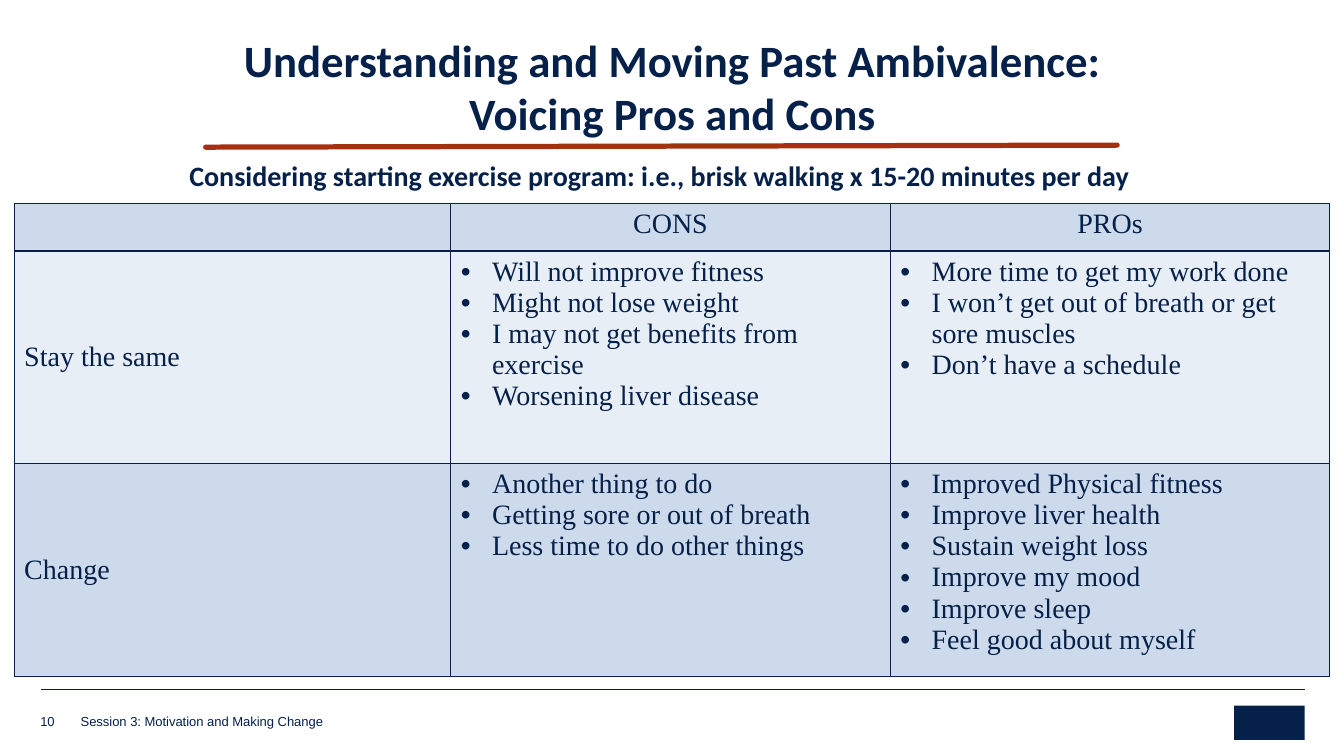
"""Build the pros and cons slide on moving past ambivalence."""
from lxml import etree
from pptx import Presentation
from pptx.dml.color import RGBColor as RGB
from pptx.enum.shapes import MSO_CONNECTOR as Link, MSO_SHAPE as Shape
from pptx.enum.text import MSO_ANCHOR as Anchor, MSO_AUTO_SIZE as Fit, PP_ALIGN as Align
from pptx.oxml.ns import qn
from pptx.util import Inches, Pt

HUES = {"navy": "052049", "rust": "A5300F", "mid": "CCDAEC", "pale": "E8EEF6"}
INK = {name: RGB.from_string(code) for name, code in HUES.items()}


def style(frame, face, size, bold=False):
    for para in frame.paragraphs:
        for run in para.runs:
            run.font.name = face
            run.font.size = Pt(size)
            run.font.bold = bold
            run.font.color.rgb = INK["navy"]


deck = Presentation()
deck.slide_width, deck.slide_height = Inches(13.33), Inches(7.5)
slide = deck.slides.add_slide(deck.slide_layouts[5])
shapes = slide.shapes

title = shapes.title
title.left, title.top = Inches(2.15), Inches(0.27)
title.width, title.height = Inches(9.04), Inches(1.53)
frame = title.text_frame
frame.text = "Understanding and Moving Past Ambivalence:\nVoicing Pros and Cons"
frame.auto_size = Fit.NONE
frame.vertical_anchor = Anchor.TOP
for para in frame.paragraphs:
    para.alignment = Align.CENTER
style(frame, "Calibri", 32, True)

rules = [
    (0.41, 6.84, 12.94, 6.84, "navy", 0.25),
    (2.04, 1.46, 11.08, 1.44, "rust", 3.75),
]
for x1, y1, x2, y2, hue, width in rules:
    rule = shapes.add_connector(Link.STRAIGHT, Inches(x1), Inches(y1), Inches(x2), Inches(y2))
    rule.line.color.rgb = INK[hue]
    rule.line.width = Pt(width)
    etree.SubElement(rule.line._get_or_add_ln().getparent(), qn("a:effectLst"))
    if hue == "rust":
        rule.line._get_or_add_ln().set("cap", "rnd")

lead = shapes.add_textbox(Inches(1.78), Inches(1.52), Inches(9.57), Inches(0.44))
lead.text_frame.word_wrap = True
lead.text_frame.text = (
    "Considering starting exercise program: i.e., brisk walking x 15-20 minutes per day"
)
style(lead.text_frame, "Calibri", 20, True)

notes = [
    ("10", 0.4, 7.06, 0.36, 0.17),
    ("Session 3: Motivation and Making Change", 0.8, 7.08, 6.29, 0.15),
]
for text, left, top, width, height in notes:
    box = shapes.add_textbox(Inches(left), Inches(top), Inches(width), Inches(height))
    frame = box.text_frame
    frame.margin_left = frame.margin_right = frame.margin_top = frame.margin_bottom = 0
    frame.word_wrap = True
    frame.vertical_anchor = Anchor.BOTTOM
    frame.text = text
    style(frame, "Arial", 9.3)

badge = shapes.add_shape(Shape.RECTANGLE, Inches(12.24), Inches(7), Inches(0.7), Inches(0.34))
badge.shadow.inherit = False
badge.fill.solid()
badge.fill.fore_color.rgb = INK["navy"]
badge.line.fill.background()

rows = [
    ["", "CONS", "PROs"],
    [
        "Stay the same",
        "Will not improve fitness\nMight not lose weight\n"
        "I may not get benefits from exercise\nWorsening liver disease",
        "More time to get my work done\n"
        "I won’t get out of breath or get sore muscles\nDon’t have a schedule",
    ],
    [
        "Change",
        "Another thing to do\nGetting sore or out of breath\nLess time to do other things",
        "Improved Physical fitness\nImprove liver health\nSustain weight loss\n"
        "Improve my mood\nImprove sleep\nFeel good about myself",
    ],
]
grid = shapes.add_table(3, 3, Inches(0.14), Inches(2.02), Inches(13.05), Inches(4.69)).table
for col, width in zip(grid.columns, (4.33, 4.36, 4.36)):
    col.width = Inches(width)
for row, height in zip(grid.rows, (0.47, 2.11, 2.11)):
    row.height = Inches(height)

for r, texts in enumerate(rows):
    for c, text in enumerate(texts):
        cell = grid.cell(r, c)
        cell.fill.solid()
        cell.fill.fore_color.rgb = INK["pale" if r == 1 else "mid"]
        props = cell._tc.get_or_add_tcPr()
        for i, side in enumerate(("lnL", "lnR", "lnT", "lnB")):
            edge = etree.Element(qn("a:" + side), w=str(Pt(1)))
            fill = etree.SubElement(edge, qn("a:solidFill"))
            etree.SubElement(fill, qn("a:srgbClr"), val=HUES["navy"])
            props.insert(i, edge)
        frame = cell.text_frame
        frame.text = text
        style(frame, "Times New Roman", 20)
        if r == 0:
            frame.paragraphs[0].alignment = Align.CENTER
        elif c == 0:
            cell.vertical_anchor = Anchor.MIDDLE
        else:
            for para in frame.paragraphs:
                pad = para._p.get_or_add_pPr()
                pad.set("marL", str(Inches(0.31)))
                pad.set("indent", str(-Inches(0.31)))
                etree.SubElement(pad, qn("a:buFont"), typeface="Arial")
                etree.SubElement(pad, qn("a:buChar"), char="•")

deck.save("out.pptx")
